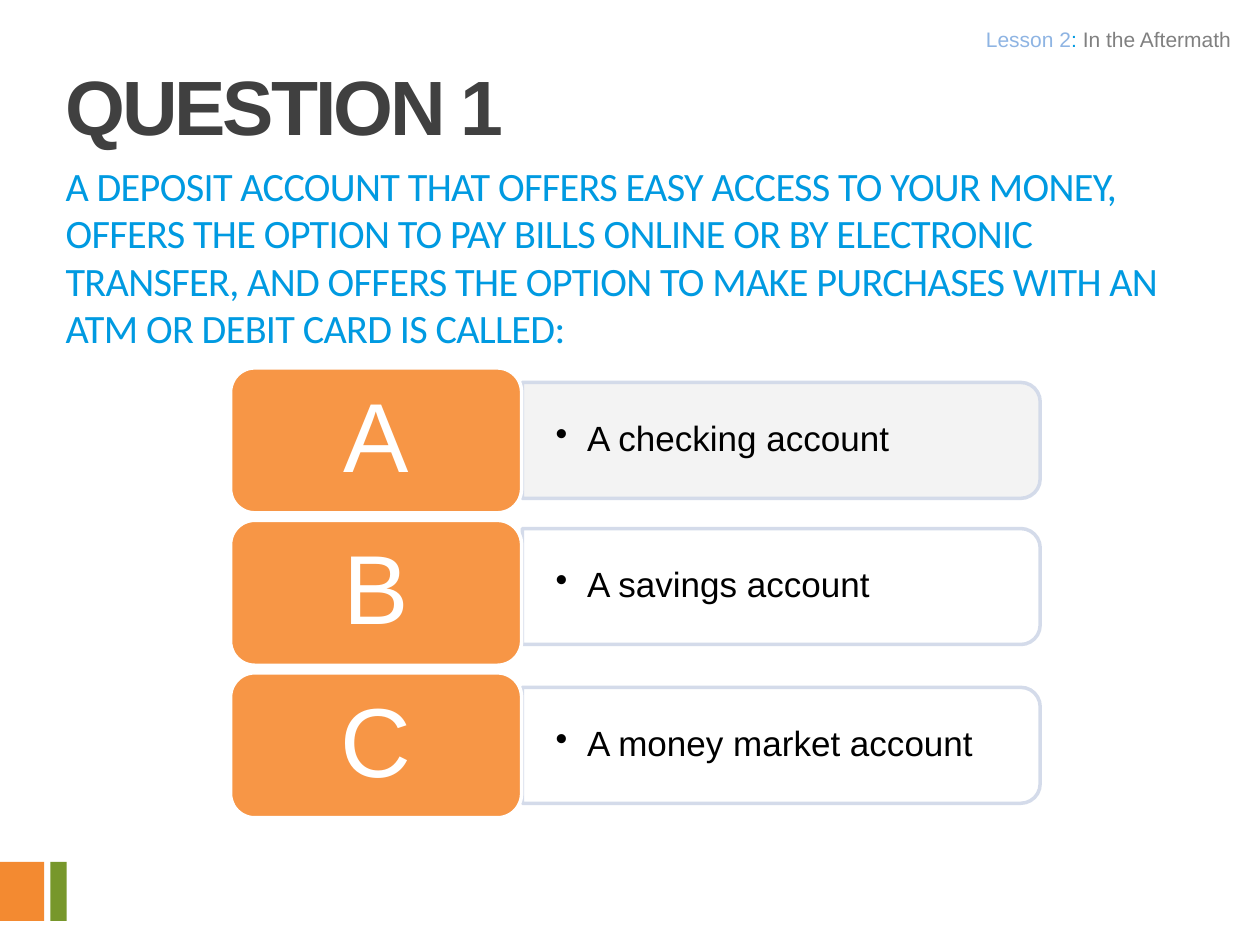
from pptx import Presentation
from pptx.dml.color import RGBColor
from pptx.enum.shapes import MSO_SHAPE as Kind
from pptx.enum.text import MSO_ANCHOR as Anchor, MSO_AUTO_SIZE as Fit, PP_ALIGN as Align
from pptx.oxml.ns import qn
from pptx.util import Inches, Pt
from lxml import etree


def style(run, size, color, face="Arial", track=None):
    run.font.size = Pt(size)
    run.font.name = face
    run.font.color.rgb = RGBColor.from_string(color)
    if track:
        run.font._element.set("spc", str(round(track * 100)))


def block(kind, left, top, width, height, fill, line=None, alpha=None):
    shape = slide.shapes.add_shape(
        kind, Inches(left), Inches(top), Inches(width), Inches(height))
    shape.shadow.inherit = False
    shape.fill.solid()
    shape.fill.fore_color.rgb = RGBColor.from_string(fill)
    if line:
        shape.line.color.rgb = RGBColor.from_string(line)
        shape.line.width = Pt(2)
    else:
        shape.line.fill.background()
    if alpha:
        for tone in shape._element.spPr.iter(qn("a:srgbClr")):
            etree.SubElement(tone, qn("a:alpha")).set("val", str(alpha * 1000))
    return shape


deck = Presentation()
deck.slide_width, deck.slide_height = Inches(10), Inches(7.5)
slide = deck.slides.add_slide(deck.slide_layouts[1])

# Corner marks
block(Kind.RECTANGLE, 0, 6.84, 0.35, 0.47, "F38A31")
block(Kind.RECTANGLE, 0.4, 6.84, 0.13, 0.47, "77972B")

# Title and question
title, body = slide.shapes.title, slide.placeholders[1]
title.text_frame.text = "QUESTION 1"
body.text_frame.text = (
    "A DEPOSIT ACCOUNT THAT OFFERS EASY ACCESS TO YOUR MONEY, "
    "OFFERS THE OPTION TO PAY BILLS ONLINE OR BY ELECTRONIC TRANSFER, "
    "AND OFFERS THE OPTION TO MAKE PURCHASES WITH AN ATM OR DEBIT CARD "
    "IS CALLED:")
for holder, top, width, height in ((title, 0.33, 8.66, 0.83), (body, 1.25, 9.25, 1)):
    holder.left, holder.top = Inches(0.42), Inches(top)
    holder.width, holder.height = Inches(width), Inches(height)
    frame = holder.text_frame
    frame.auto_size = Fit.NONE
    frame.vertical_anchor = Anchor.TOP
    para = frame.paragraphs[0]
    para.alignment = Align.LEFT
    para.space_before = Pt(0)

head = title.text_frame.paragraphs[0]
head.line_spacing = Pt(59)
style(head.runs[0], 44, "404040", track=-1.8)
head.runs[0].font.bold = True

ask = body.text_frame.paragraphs[0]
ask.line_spacing = 0.98
props = ask._p.get_or_add_pPr()
props.set("marL", "0")
props.set("indent", "0")
etree.SubElement(props, qn("a:buNone"))
style(ask.runs[0], 23, "009AE1", "Calibri", -0.4)

# Answers: a bar turned on its side, its text and a letter tile
answers = (
    ("A", "A checking account", 1.44, "F2F2F2"),
    ("B", "A savings account", 2.6, "FFFFFF"),
    ("C", "A money market account", 3.86, "FFFFFF"),
)
for row, (letter, answer, top, fill) in enumerate(answers):
    bar = block(Kind.ROUND_2_SAME_RECTANGLE, 5.74, top, 0.92, 4.11, fill, "D0D8E8", 90)
    bar.rotation = 90

    box = slide.shapes.add_textbox(
        Inches(4.14), Inches(top + 1.64), Inches(4.06), Inches(0.83))
    frame = box.text_frame
    frame.word_wrap = True
    frame.vertical_anchor = Anchor.MIDDLE
    frame.margin_left = frame.margin_right = Inches(0.27)
    frame.margin_top = frame.margin_bottom = Inches(0.14)
    frame.text = answer
    para = frame.paragraphs[0]
    para.level = 1
    para.line_spacing = 0.9
    props = para._p.get_or_add_pPr()
    props.set("marL", str(Inches(0.25)))
    props.set("indent", str(-Inches(0.25)))
    etree.SubElement(props, qn("a:buChar")).set("char", "•")
    style(para.runs[0], 20, "000000")

    tile = block(Kind.ROUNDED_RECTANGLE, 1.83, 2.92 + 1.21 * row, 2.31, 1.15,
                 "F79646", "FFFFFF")
    frame = tile.text_frame
    frame.vertical_anchor = Anchor.MIDDLE
    frame.text = letter
    para = frame.paragraphs[0]
    para.alignment = Align.CENTER
    para.line_spacing = 0.9
    style(para.runs[0], 56, "FFFFFF")

# Lesson label
label = slide.shapes.add_textbox(Inches(4), Inches(0.17), Inches(5.85), Inches(0.32))
frame = label.text_frame
frame.word_wrap = True
frame.margin_left = frame.margin_right = Inches(0.08)
frame.margin_top = frame.margin_bottom = Inches(0.04)
para = frame.paragraphs[0]
para.alignment = Align.RIGHT
for text, color in (("Lesson 2", "8EB4E3"), (": ", "009AE1"), ("In the Aftermath", "808080")):
    run = para.add_run()
    run.text = text
    style(run, 12, color)

deck.save("out.pptx")
